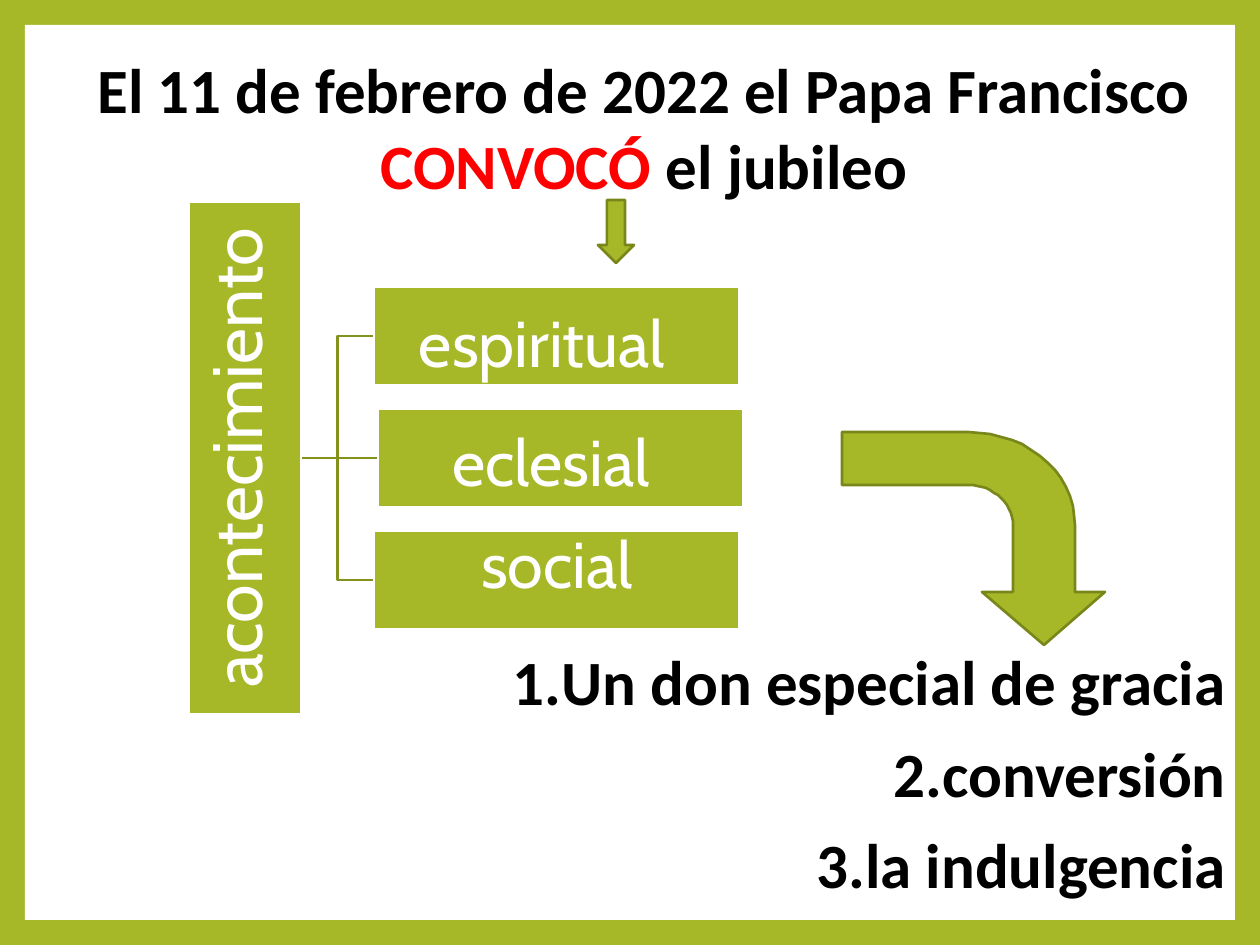
import math
from dataclasses import dataclass

import lxml.etree
import pptx
import pptx.dml.color
import pptx.enum.shapes
import pptx.enum.text
import pptx.oxml.ns
import pptx.util

SCALE = 914400 / 126
SHAPE = pptx.enum.shapes.MSO_SHAPE
LINK = pptx.enum.shapes.MSO_CONNECTOR
ALIGN = pptx.enum.text.PP_ALIGN
ANCHOR = pptx.enum.text.MSO_ANCHOR
qn = pptx.oxml.ns.qn


@dataclass
class Theme:
    green: str = "A6B727"
    edge: str = "79861A"
    rail: str = "83911D"
    white: str = "FFFFFF"
    black: str = "000000"
    red: str = "FF0000"
    bold: str = "Calibri"
    soft: str = "Cabin"
    head: int = 36
    label: int = 37
    side: int = 40
    line: float = 1.5


def px(num):
    return pptx.util.Emu(round(num * SCALE))


def rgb(code):
    return pptx.dml.color.RGBColor.from_string(code)


class Deck:
    def __init__(self, theme, slide):
        self.theme = theme
        self.shapes = slide.shapes

    def paint(self, shape, fill, line=None):
        shape.shadow.inherit = False
        shape.fill.solid()
        shape.fill.fore_color.rgb = rgb(fill)
        if line:
            shape.line.color.rgb = rgb(line)
            shape.line.width = pptx.util.Pt(self.theme.line)
        else:
            shape.line.fill.background()
        return shape

    def shape(self, kind, area, fill, line=None):
        item = self.shapes.add_shape(kind, *map(px, area))
        return self.paint(item, fill, line)

    def outline(self, points, fill, line):
        form = self.shapes.build_freeform(*points[0], scale=SCALE)
        form.add_line_segments(points[1:], close=True)
        return self.paint(form.convert_to_shape(), fill, line)

    def link(self, kind):
        item = self.shapes.add_connector(kind, 0, 0, 0, 0)
        item.line.color.rgb = rgb(self.theme.rail)
        item.line.width = pptx.util.Pt(self.theme.line)
        lxml.etree.SubElement(item._element.spPr, qn("a:effectLst"))
        return item

    def frame(self, shape, top=0):
        frame = shape.text_frame
        frame.word_wrap = True
        frame.margin_left = frame.margin_right = frame.margin_bottom = 0
        frame.margin_top = px(top)
        return frame

    def text(self, area, top=0):
        return self.frame(self.shapes.add_textbox(*map(px, area)), top)

    def style(self, run, face, size, color, bold=False):
        run.font.name = face
        run.font.size = pptx.util.Pt(size)
        run.font.color.rgb = rgb(color)
        run.font.bold = bold

    def title(self, area, parts):
        para = self.text(area, 4).paragraphs[0]
        para.alignment = ALIGN.CENTER
        for words, color in parts:
            run = para.add_run()
            run.text = words
            self.style(run, self.theme.bold, self.theme.head, color, True)

    def label(self, area, words):
        frame = self.text(area)
        frame.text = words
        para = frame.paragraphs[0]
        para.alignment = ALIGN.CENTER
        self.style(para.runs[0], self.theme.soft, self.theme.label, self.theme.white)

    def side(self, shape, words):
        frame = self.frame(shape)
        frame._txBody.bodyPr.set("vert", "vert270")
        frame.vertical_anchor = ANCHOR.MIDDLE
        frame.text = words
        para = frame.paragraphs[0]
        para.alignment = ALIGN.CENTER
        para.line_spacing = pptx.util.Pt(36)
        self.style(para.runs[0], self.theme.soft, self.theme.side, self.theme.white)

    def steps(self, area, lines):
        frame = self.text(area, 22)
        frame.text = "\n".join(lines)
        for rank, para in enumerate(frame.paragraphs):
            props = para._p.get_or_add_pPr()
            props.set("marL", str(px(396)))
            props.set("indent", str(px(-48)))
            lxml.etree.SubElement(props, qn("a:buAutoNum"), type="arabicPeriod")
            para.alignment = ALIGN.RIGHT
            if rank:
                para.space_before = pptx.util.Pt(9)
            self.style(para.runs[0], self.theme.bold, self.theme.head, self.theme.black, True)


def arc(mid, wide, high, turns):
    return [
        (mid[0] + wide * math.sin(math.radians(turn)),
         mid[1] - high * math.cos(math.radians(turn)))
        for turn in turns
    ]


def main():
    file = pptx.Presentation()
    file.slide_width, file.slide_height = px(1260), px(945)
    theme = Theme()
    deck = Deck(theme, file.slides.add_slide(file.slide_layouts[6]))

    deck.shape(SHAPE.RECTANGLE, (0, 0, 1260, 945), theme.green)
    deck.shape(SHAPE.RECTANGLE, (25, 25, 1210, 895), theme.white)
    deck.title((53, 47, 1182, 155), [
        ("El 11 de febrero de 2022 el Papa Francisco ", theme.black),
        ("CONVOCÓ ", theme.red),
        ("el jubileo", theme.black),
    ])
    deck.shape(SHAPE.DOWN_ARROW, (598, 200, 36, 63), theme.green, theme.edge)
    deck.steps((156, 621, 1070, 281),
               ["Un don especial de gracia", "conversión", "la indulgencia"])

    links = [deck.link(kind) for kind in (LINK.ELBOW, LINK.STRAIGHT, LINK.ELBOW)]
    bar = deck.shape(SHAPE.RECTANGLE, (189, 202, 112, 512), theme.green, theme.white)
    deck.side(bar, "acontecimiento")
    kinds = [
        ("espiritual", 374, 542, 303),
        ("eclesial", 378, 551, 422),
        ("social", 374, 557, 524),
    ]
    for row, (link, (words, left, mid, top)) in enumerate(zip(links, kinds)):
        box = deck.shape(SHAPE.RECTANGLE, (left, 287 + 122 * row, 365, 98),
                         theme.green, theme.white)
        link.begin_connect(bar, 3)
        link.end_connect(box, 1)
        deck.label((mid - 150, top, 300, 79), words)

    mid = (968, 525)
    turns = range(0, 91, 6)
    head = [(1075, 592), (1105, 592), (1044, 645), (982, 592), (1013, 592)]
    deck.outline(
        [(842, 432), *arc(mid, 107, 93, turns), *head,
         *arc(mid, 45, 40, reversed(turns)), (842, 485)],
        theme.green, theme.edge)
    file.save("out.pptx")


if __name__ == "__main__":
    main()
